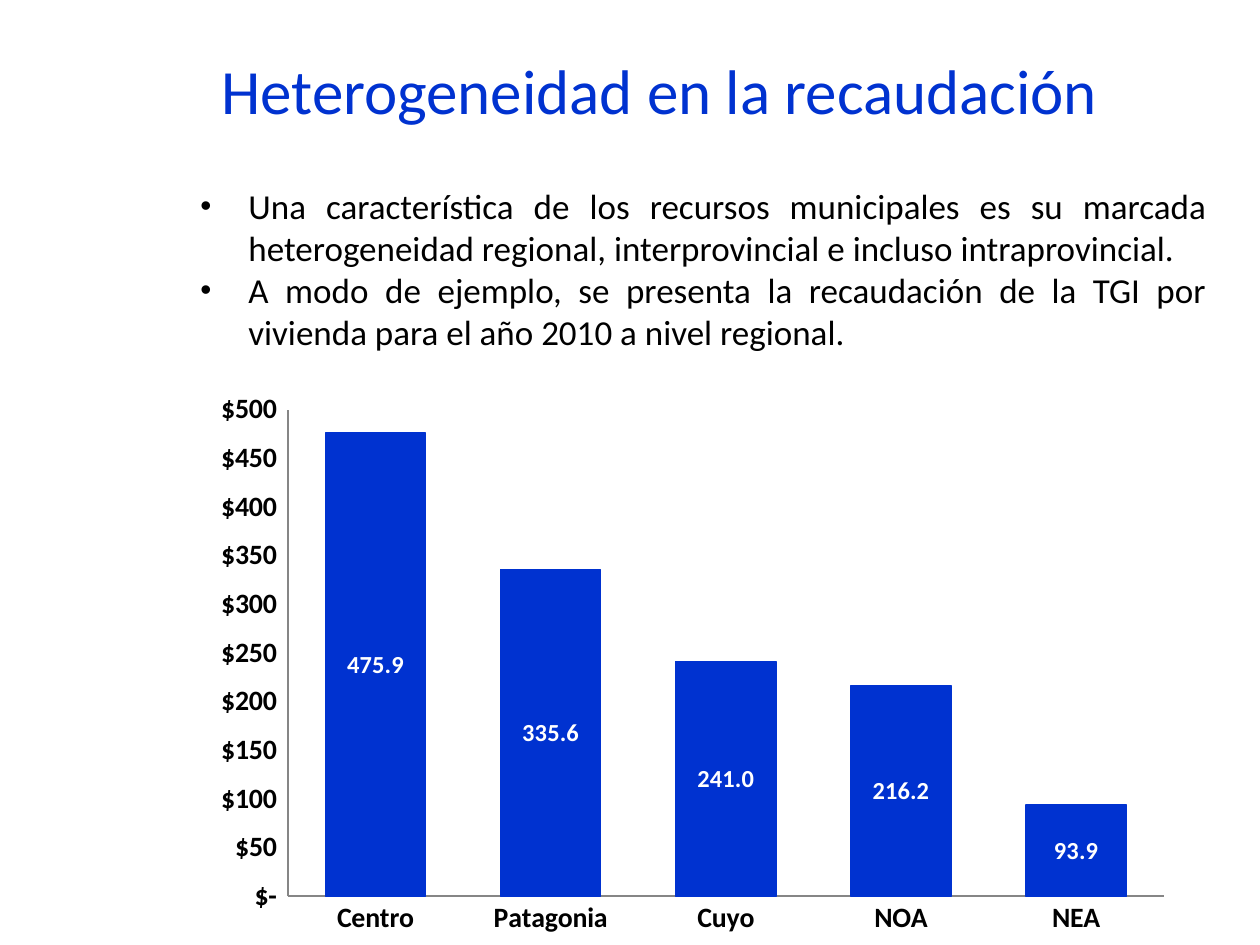
from dataclasses import dataclass

from lxml.etree import SubElement
from pptx import Presentation
from pptx.chart.data import CategoryChartData
from pptx.dml.color import RGBColor
from pptx.enum.chart import XL_CHART_TYPE as ChartType
from pptx.enum.chart import XL_LABEL_POSITION as LabelPosition
from pptx.enum.chart import XL_TICK_MARK as TickMark
from pptx.enum.text import MSO_ANCHOR as Anchor
from pptx.enum.text import PP_ALIGN as Align
from pptx.oxml import parse_xml
from pptx.oxml.ns import nsdecls, qn
from pptx.util import Emu, Pt

PX_PER_INCH = 126
CURRENCY = '_("$"* #,##0_);_("$"* \\(#,##0\\);_("$"* "-"_);_(@_)'

TITLE = "Heterogeneidad en la recaudación"
BULLETS = [
    "Una característica de los recursos municipales es su marcada heterogeneidad "
    "regional, interprovincial e incluso intraprovincial.",
    "A modo de ejemplo, se presenta la recaudación de la TGI por vivienda para el "
    "año 2010 a nivel regional.",
]
REVENUE = {"Centro": 475.9, "Patagonia": 335.6, "Cuyo": 241.0, "NOA": 216.2, "NEA": 93.9}


def px(length):
    return Emu(round(length * 914400 / PX_PER_INCH))


@dataclass(frozen=True)
class Theme:
    font: str = "Calibri"
    blue: RGBColor = RGBColor(0x00, 0x32, 0xD0)
    black: RGBColor = RGBColor(0x00, 0x00, 0x00)
    white: RGBColor = RGBColor(0xFF, 0xFF, 0xFF)
    axis: RGBColor = RGBColor(0x86, 0x86, 0x86)
    title_size: int = 36
    body_size: int = 20
    axis_size: int = 16
    label_size: int = 14


class SlideBuilder:
    def __init__(self, slide, theme):
        self.slide = slide
        self.theme = theme

    def style_font(self, font, size, color, bold=False):
        font.name = self.theme.font
        font.size = Pt(size)
        font.color.rgb = color
        font.bold = bold

    def text_frame(self, box, anchor):
        frame = self.slide.shapes.add_textbox(*map(px, box)).text_frame
        frame.word_wrap = True
        frame.vertical_anchor = anchor
        return frame

    def title(self, text, box):
        paragraph = self.text_frame(box, Anchor.MIDDLE).paragraphs[0]
        paragraph.text = text
        self.style_font(paragraph.font, self.theme.title_size, self.theme.blue)

    def bullets(self, texts, box, indent):
        frame = self.text_frame(box, Anchor.TOP)
        for index, text in enumerate(texts):
            paragraph = frame.add_paragraph() if index else frame.paragraphs[0]
            paragraph.text = text
            paragraph.alignment = Align.JUSTIFY
            properties = paragraph._p.get_or_add_pPr()
            properties.set("marL", str(px(indent)))
            properties.set("indent", str(-px(indent)))
            SubElement(properties, qn("a:buSzPct"), val="90000")
            SubElement(properties, qn("a:buFont"), typeface="Arial")
            SubElement(properties, qn("a:buChar"), char="•")
            self.style_font(paragraph.font, self.theme.body_size, self.theme.black)

    def column_chart(self, values, box, plot):
        theme = self.theme
        data = CategoryChartData()
        data.categories = list(values)
        data.add_series("Series 1", list(values.values()))
        chart = self.slide.shapes.add_chart(
            ChartType.COLUMN_CLUSTERED, *map(px, box), data).chart
        chart.has_legend = False
        chart.has_title = False
        self.style_font(chart.font, 10, theme.black)
        for axis in (chart.category_axis, chart.value_axis):
            axis.major_tick_mark = axis.minor_tick_mark = TickMark.NONE
            axis.has_major_gridlines = False
            axis.format.line.color.rgb = theme.axis
            axis.format.line.width = Pt(1)
            self.style_font(axis.tick_labels.font, theme.axis_size, theme.black, True)
        value_axis = chart.value_axis
        value_axis.minimum_scale, value_axis.maximum_scale = 0, 500
        value_axis.major_unit = 50
        value_axis.tick_labels.number_format = CURRENCY
        value_axis.tick_labels.number_format_is_linked = False

        bars = chart.plots[0]
        bars.gap_width = 75
        bars.vary_by_categories = False
        series = bars.series[0]
        series.format.fill.solid()
        series.format.fill.fore_color.rgb = theme.blue
        series.format.line.color.rgb = theme.blue
        series.format.line.width = Pt(0.75)
        labels = series.data_labels
        labels.show_value = True
        labels.position = LabelPosition.CENTER
        labels.number_format = "#,##0.0"
        labels.number_format_is_linked = False
        self.style_font(labels.font, theme.label_size, theme.white, True)
        self.place_plot(chart, plot)

    def place_plot(self, chart, plot):
        """Fix the inner plot area, given as fractions of the chart."""
        area = chart._chartSpace.chart.plotArea
        for layout in area.findall(qn("c:layout")):
            area.remove(layout)
        modes = "".join(f'<c:{name}Mode val="edge"/>' for name in "xy")
        sizes = "".join(f'<c:{name} val="{value}"/>' for name, value in zip("xywh", plot))
        area.insert(0, parse_xml(
            f'<c:layout {nsdecls("c")}><c:manualLayout><c:layoutTarget val="inner"/>'
            f"{modes}{sizes}</c:manualLayout></c:layout>"))


def main():
    presentation = Presentation()
    presentation.slide_width, presentation.slide_height = px(1260), px(945)
    slide = presentation.slides.add_slide(presentation.slide_layouts[6])
    builder = SlideBuilder(slide, Theme())
    builder.column_chart(REVENUE, (215, 370, 978, 566), (0.07, 0.07, 0.9, 0.86))
    builder.title(TITLE, (209, 10, 1031, 158))
    builder.bullets(BULLETS, (188, 178, 1031, 183), indent=48)
    presentation.save("out.pptx")


if __name__ == "__main__":
    main()
